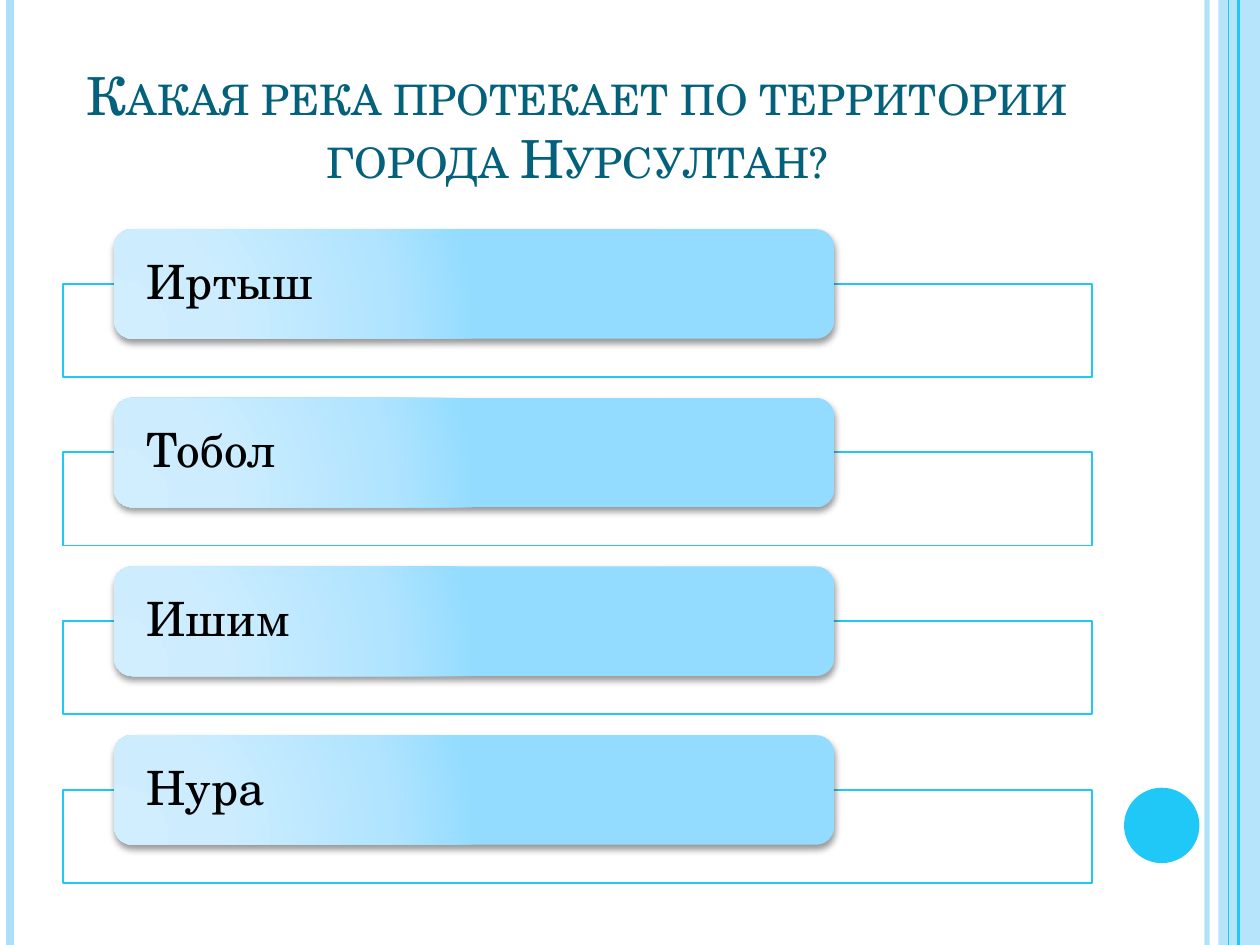
import dataclasses

import pptx
import pptx.dml.color
import pptx.enum.shapes
import pptx.enum.text
import pptx.oxml
import pptx.oxml.ns
import pptx.util

Cm, Pt = pptx.util.Cm, pptx.util.Pt
RGBColor = pptx.dml.color.RGBColor
SHAPE = pptx.enum.shapes.MSO_SHAPE
ANCHOR = pptx.enum.text.MSO_ANCHOR
ALIGN = pptx.enum.text.PP_ALIGN
qn = pptx.oxml.ns.qn

WHITE = RGBColor(0xFF, 0xFF, 0xFF)
BLACK = RGBColor(0x00, 0x00, 0x00)
PALE = RGBColor(0xAC, 0xE0, 0xFA)
CYAN = RGBColor(0x20, 0xC8, 0xF7)
TEAL = RGBColor(0x04, 0x61, 0x7B)
GRADIENT = [
    (0, RGBColor(0xD1, 0xEE, 0xFF)),
    (30, RGBColor(0xCD, 0xED, 0xFF)),
    (75, RGBColor(0xB1, 0xE4, 0xFF)),
    (100, RGBColor(0x93, 0xDC, 0xFF)),
]

FONT = "TeX Gyre Schola"
TITLE_FONT = {"name": FONT, "size": Pt(30), "bold": False, "color": TEAL}
ANSWER_FONT = {"name": FONT, "size": Pt(27), "color": BLACK}

TITLE = "Какая река протекает по территории города Нурсултан?"
ANSWERS = ["Иртыш", "Тобол", "Ишим", "Нура"]
FIRST_TOP, PITCH = 4.62, 3.4
NS = 'xmlns:a="http://schemas.openxmlformats.org/drawingml/2006/main"'


@dataclasses.dataclass
class Stripe:
    x: float
    color: RGBColor
    width: float
    alpha: int = 100


@dataclasses.dataclass
class Box:
    left: float
    top: float
    width: float
    height: float


STRIPES = [
    Stripe(24.33, PALE, 3, 93),
    Stripe(0.2, PALE, 4.5),
    Stripe(24.97, CYAN, 1.5),
    Stripe(24.77, CYAN, 0.75),
]


def set_font(r, values: dict) -> None:
    for key, value in values.items():
        if key == "color":
            r.font.color.rgb = value
        else:
            setattr(r.font, key, value)


def set_alpha(parent, percent: int) -> None:
    """Make the first solid colour below parent partly transparent."""
    color = next(parent.iter(qn("a:srgbClr")))
    color.append(pptx.oxml.parse_xml(f'<a:alpha {NS} val="{percent * 1000}"/>'))


def add_stripe(slide, stripe: Stripe, height: int) -> None:
    x = Cm(stripe.x)
    line = slide.shapes.add_connector(
        pptx.enum.shapes.MSO_CONNECTOR.STRAIGHT, x, 0, x, height)
    line.line.color.rgb = stripe.color
    line.line.width = Pt(stripe.width)
    if stripe.alpha < 100:
        set_alpha(line.element.spPr, stripe.alpha)
    line.element.spPr.append(pptx.oxml.parse_xml(f"<a:effectLst {NS}/>"))


def add_box(slide, kind, box: Box, fill=None, alpha: int = 100, line=None):
    sp = slide.shapes.add_shape(
        kind, Cm(box.left), Cm(box.top), Cm(box.width), Cm(box.height))
    sp.shadow.inherit = False
    if fill is not None:
        sp.fill.solid()
        sp.fill.fore_color.rgb = fill
        if alpha < 100:
            set_alpha(sp.element.spPr, alpha)
    if line is None:
        sp.line.fill.background()
    else:
        sp.line.color.rgb = line
        sp.line.width = Pt(1)
    return sp


def add_gradient_and_shadow(sp) -> None:
    spPr = sp.element.spPr
    stops = "".join(
        f'<a:gs pos="{pos * 1000}"><a:srgbClr val="{color}"/></a:gs>'
        for pos, color in GRADIENT)
    spPr.find(qn("a:prstGeom")).addnext(pptx.oxml.parse_xml(
        f'<a:gradFill {NS} rotWithShape="1"><a:gsLst>{stops}</a:gsLst>'
        '<a:path path="circle"><a:fillToRect l="5000" t="100000" r="120000" '
        'b="10000"/></a:path></a:gradFill>'))
    spPr.find(qn("a:effectLst")).append(pptx.oxml.parse_xml(
        f'<a:outerShdw {NS} blurRad="{Pt(4)}" dist="{Pt(2)}" dir="5400000" '
        'rotWithShape="0"><a:srgbClr val="000000"><a:alpha val="40000"/>'
        '</a:srgbClr></a:outerShdw>'))


def add_answer(slide, text: str, top: float) -> None:
    add_box(slide, SHAPE.RECTANGLE, Box(1.27, top + 1.1, 20.74, 1.88),
            WHITE, 90, CYAN)
    sp = add_box(slide, SHAPE.ROUNDED_RECTANGLE, Box(2.3, top, 14.52, 2.21))
    add_gradient_and_shadow(sp)
    tf = sp.text_frame
    frame = {"margin_left": Cm(0.55), "margin_right": Cm(0.55), "margin_top": 0,
             "margin_bottom": 0, "word_wrap": True,
             "vertical_anchor": ANCHOR.MIDDLE}
    for key, value in frame.items():
        setattr(tf, key, value)
    p = tf.paragraphs[0]
    p.alignment = ALIGN.LEFT
    p.line_spacing = 0.9
    r = p.add_run()
    r.text = text
    set_font(r, ANSWER_FONT)


def add_title(slide) -> None:
    sp = slide.shapes.title
    place = {"left": Cm(1.27), "top": Cm(0.76),
             "width": Cm(20.74), "height": Cm(3.18)}
    for key, value in place.items():
        setattr(sp, key, value)
    tf = sp.text_frame
    tf.vertical_anchor = ANCHOR.BOTTOM
    tf.word_wrap = True
    tf.auto_size = pptx.enum.text.MSO_AUTO_SIZE.NONE
    p = tf.paragraphs[0]
    p.alignment = ALIGN.CENTER
    r = p.add_run()
    r.text = TITLE
    set_font(r, TITLE_FONT)
    r.font._element.set("cap", "small")


def main() -> None:
    prs = pptx.Presentation()
    prs.slide_width, prs.slide_height = Cm(25.4), Cm(19.05)
    slide = prs.slides.add_slide(prs.slide_layouts[5])

    # Side stripes, right band and dot
    add_box(slide, SHAPE.RECTANGLE, Box(24.56, 0, 0.84, 19.05), PALE, 87)
    for stripe in STRIPES:
        add_stripe(slide, stripe, prs.slide_height)
    add_box(slide, SHAPE.OVAL, Box(22.66, 15.88, 1.52, 1.52), CYAN)

    # Question and answers
    add_title(slide)
    for i, text in enumerate(ANSWERS):
        add_answer(slide, text, FIRST_TOP + i * PITCH)

    prs.save("out.pptx")


if __name__ == "__main__":
    main()
